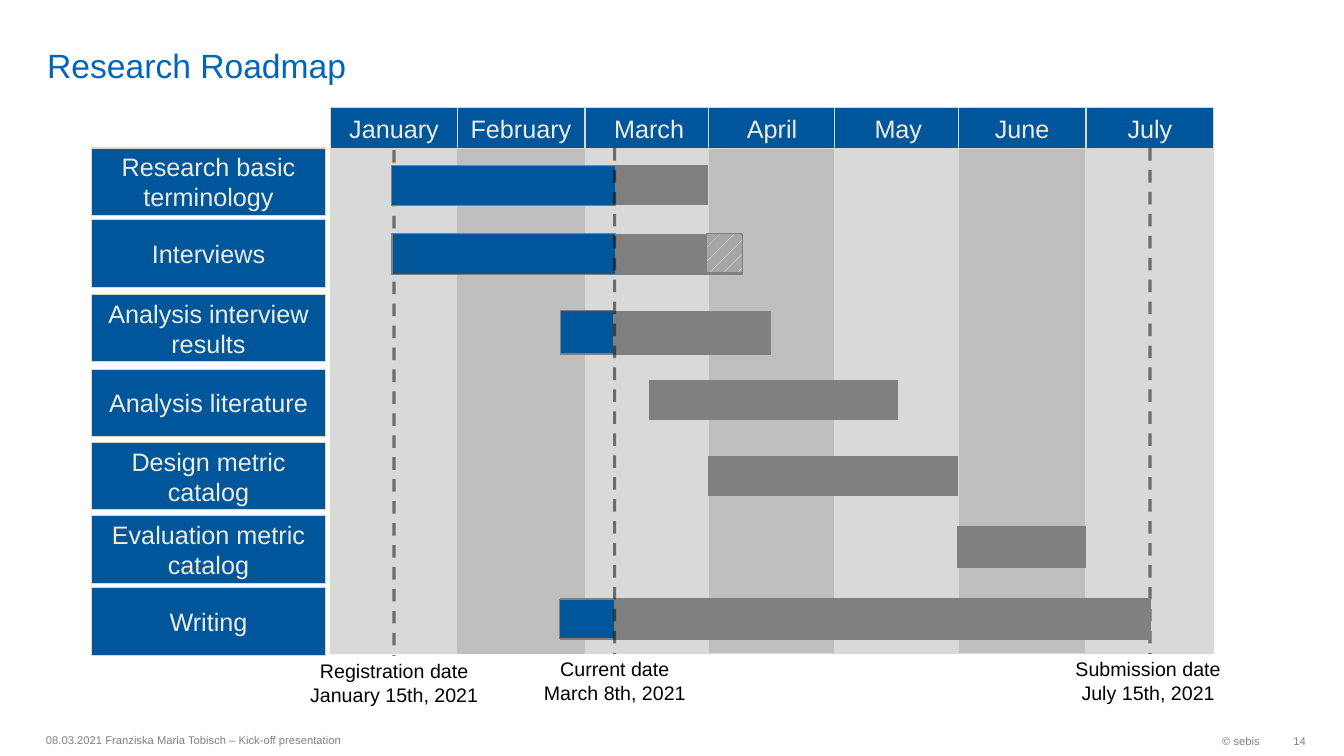
from lxml import etree
from pptx import Presentation
from pptx.dml.color import RGBColor
from pptx.enum.dml import MSO_LINE, MSO_PATTERN
from pptx.enum.shapes import MSO_CONNECTOR, MSO_SHAPE
from pptx.enum.text import MSO_ANCHOR, PP_ALIGN
from pptx.oxml.ns import qn
from pptx.util import Cm, Pt

RECTANGLE, STRAIGHT = MSO_SHAPE.RECTANGLE, MSO_CONNECTOR.STRAIGHT
LEFT, CENTER, RIGHT = PP_ALIGN.LEFT, PP_ALIGN.CENTER, PP_ALIGN.RIGHT
TOP, MIDDLE, BOTTOM = MSO_ANCHOR.TOP, MSO_ANCHOR.MIDDLE, MSO_ANCHOR.BOTTOM
DASH, DOTTED = MSO_LINE.DASH, MSO_PATTERN.PERCENT_5

TITLE_BLUE = RGBColor(0x00, 0x65, 0xBD)
BLUE = RGBColor(0x00, 0x56, 0x9B)
CREAM = RGBColor(0xEE, 0xEC, 0xE1)
BORDER = RGBColor(0xDA, 0xD7, 0xCB)
LIGHT = RGBColor(0xD9, 0xD9, 0xD9)
MEDIUM = RGBColor(0xBF, 0xBF, 0xBF)
SILVER = RGBColor(0xA6, 0xA6, 0xA6)
GREY = RGBColor(0x80, 0x80, 0x80)
BLACK = RGBColor(0, 0, 0)
WHITE = RGBColor(0xFF, 0xFF, 0xFF)

# Content; all boxes are (left, top, width, height) in cm
MONTHS = [("January", 8.33), ("February", 11.53), ("March", 14.76), ("April", 17.86),
          ("May", 21.04), ("June", 24.16), ("July", 27.38)]

# Task, label top, planned bar, finished bar
TASKS = [
    ("Research basic terminology", 3.73, (9.88, 4.17, 7.95, 0.99), (9.86, 4.17, 5.66, 1.02)),
    ("Interviews", 5.54, (9.88, 5.92, 8.84, 0.99), (9.88, 5.89, 5.64, 1.02)),
    ("Analysis interview results", 7.42, (14.12, 7.85, 5.31, 1.09), (14.12, 7.82, 1.35, 1.09)),
    ("Analysis literature", 9.3, (16.36, 9.58, 6.27, 0.99), None),
    ("Design metric catalog", 11.15, (17.86, 11.51, 6.27, 0.99), None),
    ("Evaluation metric catalog", 13, (24.13, 13.28, 3.23, 1.02), None),
    ("Writing", 14.81, (14.12, 15.09, 14.88, 1.02), (14.1, 15.11, 1.4, 0.99)),
]
INTERVIEW_BUFFER = (17.81, 5.89, 0.91, 0.99)

# Caption lines, line x, line top, caption left
REGISTRATION = (["Registration date", "January 15th, 2021"], 9.93, 3.78, 6.76)
SUBMISSION = (["Submission date", "July 15th, 2021"], 28.98, 3.73, 25.76)
CURRENT = (["Current date", "March 8th, 2021"], 15.49, 3.73, 12.32)

FOOTERS = [
    ("© sebis", (26.06, 18.26, 5.94, 0.81), RIGHT, 0.25),
    ("08.03.2021 Franziska Maria Tobisch – Kick-off presentation",
     (0.91, 18.24, 16, 0.81), LEFT, 0.25),
    ("14", (32, 18.26, 0.91, 0.81), RIGHT, 0),
]

# Layout
LABEL_LEFT, LABEL_WIDTH, LABEL_HEIGHT = 2.31, 5.89, 1.7
MONTH_WIDTH, HEADER_TOP, HEADER_HEIGHT = 3.2, 2.72, 1.02
CHART_TOP, CHART_HEIGHT = 3.71, 12.75
CAPTION_WIDTH, CAPTION_HEIGHT = 6.35, 1.47

presentation = Presentation()
presentation.slide_width, presentation.slide_height = Cm(33.87), Cm(19.05)
slide = presentation.slides.add_slide(presentation.slide_layouts[6])


def write(shape, lines, size, color, alignment=CENTER, anchor=MIDDLE, insets=None):
    frame = shape.text_frame
    settings = {"word_wrap": True, "vertical_anchor": anchor, **(insets or {})}
    for name, value in settings.items():
        setattr(frame, name, value)
    frame.text = "\n".join(lines)
    for paragraph in frame.paragraphs:
        paragraph.alignment = alignment
        for name, value in {"name": "Arial", "size": Pt(size)}.items():
            setattr(paragraph.font, name, value)
        paragraph.font.color.rgb = color


def add_text(box, *text, **options):
    write(slide.shapes.add_textbox(*map(Cm, box)), *text, **options)


def add_box(box, fill, line):
    shape = slide.shapes.add_shape(RECTANGLE, *map(Cm, box))
    shape.shadow.inherit = False
    shape.fill.solid()
    shape.fill.fore_color.rgb = fill
    shape.line.color.rgb = line
    shape.line.width = Pt(0.75)
    return shape


def add_date(lines, x, top, caption_left):
    connector = slide.shapes.add_connector(
        STRAIGHT, Cm(x), Cm(top), Cm(x), Cm(top + CHART_HEIGHT))
    connector.line.color.rgb = BLACK
    connector.line.width = Pt(2.25)
    connector.line.dash_style = DASH
    properties = connector.element.spPr
    color = next(properties.iter(qn("a:srgbClr")))
    etree.SubElement(color, qn("a:alpha")).set("val", "50000")
    etree.SubElement(properties, qn("a:effectLst"))
    add_text((caption_left, top + 12.7, CAPTION_WIDTH, CAPTION_HEIGHT),
             lines, 14, BLACK, anchor=TOP)


# Title and footer
add_text((0.94, 0.13, 29.41, 2.01), ["Research Roadmap"], 24, TITLE_BLUE, LEFT, BOTTOM,
         {"margin_top": 0, "margin_bottom": 0})
for text, box, alignment, right_inset in FOOTERS:
    add_text(box, [text], 8, GREY, alignment, insets={"margin_right": Cm(right_inset)})

# Month columns
for index, (month, left) in enumerate(MONTHS):
    fill = MEDIUM if index % 2 else LIGHT
    line = MEDIUM if month == "February" else LIGHT
    add_box((left, CHART_TOP, MONTH_WIDTH, CHART_HEIGHT), fill, line)
    header = add_box((left, HEADER_TOP, MONTH_WIDTH, HEADER_HEIGHT), BLUE, BORDER)
    write(header, [month], 18, CREAM)

# Start and end dates lie behind the bars
add_date(*REGISTRATION)
add_date(*SUBMISSION)

# Task labels and bars
for task, top, planned, finished in TASKS:
    label = add_box((LABEL_LEFT, top, LABEL_WIDTH, LABEL_HEIGHT), BLUE, BORDER)
    write(label, [task], 18, CREAM)
    add_box(planned, GREY, GREY)
    if finished:
        add_box(finished, BLUE, GREY)

# Current date lies in front of the bars
add_date(*CURRENT)

# Hatched buffer at the end of the interviews
buffer = add_box(INTERVIEW_BUFFER, SILVER, GREY)
buffer.fill.patterned()
buffer.fill.pattern = DOTTED
buffer.fill.fore_color.rgb = WHITE
buffer.fill.back_color.rgb = SILVER

presentation.save("out.pptx")
